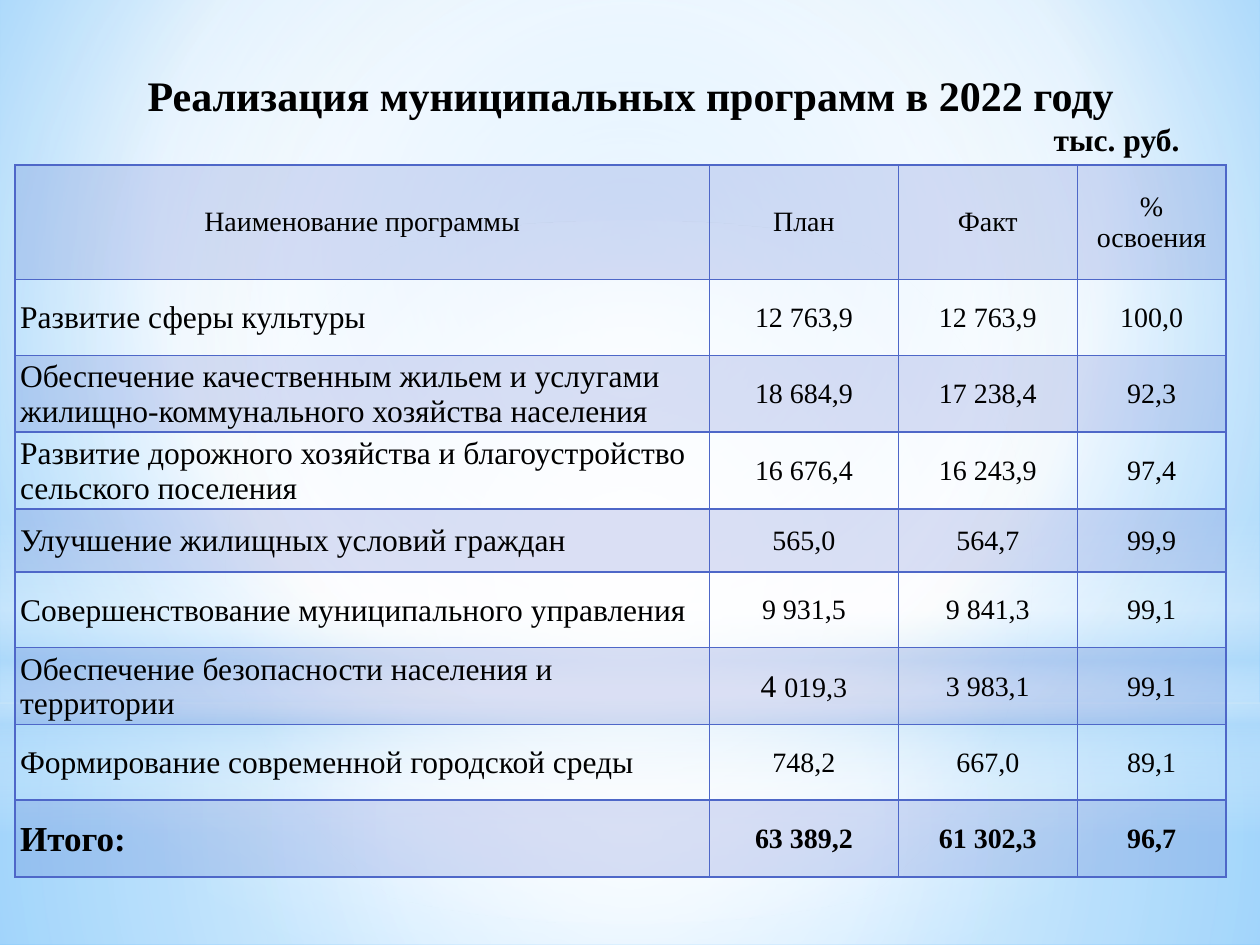
from dataclasses import dataclass

from lxml.etree import SubElement
from pptx import Presentation
from pptx.dml.color import RGBColor
from pptx.enum.shapes import MSO_SHAPE as Shape
from pptx.enum.text import MSO_ANCHOR as Anchor, PP_ALIGN as Align
from pptx.oxml.ns import qn
from pptx.util import Inches, Pt

WIDTH, HEIGHT = Inches(10), Inches(7.5)
FONT = "Times New Roman"
COLORS = {
    "text": "000000",
    "grid": "4E67C8",
    "white": "FFFFFF",
    "mist": "B4DCFA",
    "sky": "9ED5FF",
    "deep": "5BB9FF",
}
BAND_OPACITY = 20

# Column widths and row heights in percent of the slide
COLUMNS = [55.1, 15, 14.2, 11.8]
ROWS = [12.13, 8, 6.13, 6.13, 6.67, 8, 8, 8, 8.13]
HEADER = ["Наименование программы", "План", "Факт", "% освоения"]
PROGRAMS = [
    ["Развитие сферы культуры", "12 763,9", "12 763,9", "100,0"],
    ["Обеспечение качественным жильем и услугами жилищно-коммунального "
     "хозяйства населения", "18 684,9", "17 238,4", "92,3"],
    ["Развитие дорожного хозяйства и благоустройство сельского поселения",
     "16 676,4", "16 243,9", "97,4"],
    ["Улучшение жилищных условий граждан", "565,0", "564,7", "99,9"],
    ["Совершенствование муниципального управления", "9 931,5", "9 841,3", "99,1"],
    ["Обеспечение безопасности населения и территории",
     "4 019,3", "3 983,1", "99,1"],
    ["Формирование современной городской среды", "748,2", "667,0", "89,1"],
]
TOTAL = ["Итого:", "63 389,2", "61 302,3", "96,7"]
LARGE_LEAD = "4 "  # this leading digit is set at the size of the names


@dataclass
class Box:
    """A region in percent of the slide's width and height."""
    left: float
    top: float
    width: float
    height: float

    def lengths(self):
        return (across(self.left), down(self.top),
                across(self.width), down(self.height))


def across(percent):
    return round(WIDTH * percent / 100)


def down(percent):
    return round(HEIGHT * percent / 100)


def add_color(parent, name, opacity=100):
    color = SubElement(parent, qn("a:srgbClr"), val=COLORS[name])
    if opacity < 100:
        SubElement(color, qn("a:alpha"), val=str(opacity * 1000))


def set_gradient(owner, fill, stops, focus=None):
    """Stops are (position, colour, opacity); no focus gives a vertical blend."""
    fill.gradient()
    gradient = next(owner.element.iter(qn("a:gradFill")))
    for child in list(gradient):
        gradient.remove(child)
    stop_list = SubElement(gradient, qn("a:gsLst"))
    for position, name, opacity in stops:
        stop = SubElement(stop_list, qn("a:gs"), pos=str(position * 1000))
        add_color(stop, name, opacity)
    if focus:
        circle = SubElement(gradient, qn("a:path"), {"path": "circle"})
        sides = {side: str(share * 1000) for side, share in zip("ltrb", focus)}
        SubElement(circle, qn("a:fillToRect"), sides)
    else:
        SubElement(gradient, qn("a:lin"), ang="5400000", scaled="0")


def add_glow(page, kind, box, stops, focus=(50, 50, 50, 50)):
    glow = page.shapes.add_shape(kind, *box.lengths())
    glow.shadow.inherit = False
    glow.line.fill.background()
    set_gradient(glow, glow.fill, stops, focus)


def add_backdrop(page):
    set_gradient(page, page.background.fill,
                 [(0, "sky", 100), (60, "white", 100), (100, "deep", 100)],
                 (20, 10, 20, 60))
    horizon = 74.4
    add_glow(page, Shape.RECTANGLE, Box(0, horizon, 100, 100 - horizon),
             [(0, "white", 91), (37, "white", 76), (100, "mist", 79)])
    add_glow(page, Shape.RECTANGLE, Box(0, 0, 100, horizon),
             [(0, "white", 89), (48, "white", 62), (100, "mist", 79)])
    add_glow(page, Shape.RECTANGLE, Box(0, 54.93, 100, 33.33),
             [(0, "white", 0), (29, "white", 30), (45, "mist", 40),
              (55, "white", 26), (65, "mist", 60), (100, "white", 0)], None)
    add_glow(page, Shape.OVAL, Box(0, 23.33, 100, horizon),
             [(0, "white", 100), (56, "white", 0)])


def style_span(span, size, bold=False):
    span.font.name = FONT
    span.font.size = Pt(size)
    span.font.bold = bold
    span.font.color.rgb = RGBColor.from_string(COLORS["text"])


def add_title(page, box):
    frame = page.shapes.add_textbox(*box.lengths()).text_frame
    frame.word_wrap = True
    frame.margin_top = Inches(0.08)
    frame.text = "Реализация муниципальных программ в 2022 году\nтыс. руб."
    looks = [(24, Align.CENTER), (18, Align.RIGHT)]
    for para, (size, align) in zip(frame.paragraphs, looks):
        para.alignment = align
        style_span(para.runs[0], size, bold=True)


def set_borders(cell):
    properties = cell._tc.get_or_add_tcPr()
    for index, side in enumerate(("lnL", "lnR", "lnT", "lnB")):
        line = SubElement(properties, qn(f"a:{side}"), w=str(Pt(1)))
        add_color(SubElement(line, qn("a:solidFill")), "grid")
        properties.insert(index, line)


def set_fill(cell, banded):
    if not banded:
        cell.fill.background()
        return
    cell.fill.solid()
    cell.fill.fore_color.rgb = RGBColor.from_string(COLORS["grid"])
    color = next(cell._tc.tcPr.iter(qn("a:srgbClr")))
    SubElement(color, qn("a:alpha"), val=str(BAND_OPACITY * 1000))


def fill_cell(cell, text, size, bold, align):
    para = cell.text_frame.paragraphs[0]
    para.alignment = align
    if text.startswith(LARGE_LEAD):
        lead = para.add_run()
        lead.text = LARGE_LEAD
        style_span(lead, 18, bold)
        text = text.removeprefix(LARGE_LEAD)
    span = para.add_run()
    span.text = text
    style_span(span, size, bold)


def add_program_table(page, box):
    lines = [HEADER, *PROGRAMS, TOTAL]
    table = page.shapes.add_table(len(ROWS), len(COLUMNS), *box.lengths()).table
    for column, width in zip(table.columns, COLUMNS):
        column.width = across(width)
    for row, height in zip(table.rows, ROWS):
        row.height = down(height)
    for r, line in enumerate(lines):
        is_header, is_total = line is HEADER, line is TOTAL
        for c, text in enumerate(line):
            cell = table.cell(r, c)
            is_name = c == 0 and not is_header
            cell.vertical_anchor = Anchor.MIDDLE
            if not is_header:
                cell.margin_left = Inches(0.04 if is_name else 0.01)
                cell.margin_right = cell.margin_top = Inches(0.01)
                cell.margin_bottom = 0
            size = (20 if is_total else 18) if is_name else 16
            align = Align.LEFT if is_name else Align.CENTER
            fill_cell(cell, text, size, is_total, align)
            set_fill(cell, banded=r % 2 == 0)
            set_borders(cell)


def main():
    deck = Presentation()
    deck.slide_width, deck.slide_height = WIDTH, HEIGHT
    page = deck.slides.add_slide(deck.slide_layouts[6])
    add_backdrop(page)
    add_title(page, Box(5.5, 6.27, 89.1, 6.27))
    add_program_table(page, Box(1.2, 17.47, sum(COLUMNS), sum(ROWS)))
    deck.save("out.pptx")


if __name__ == "__main__":
    main()
